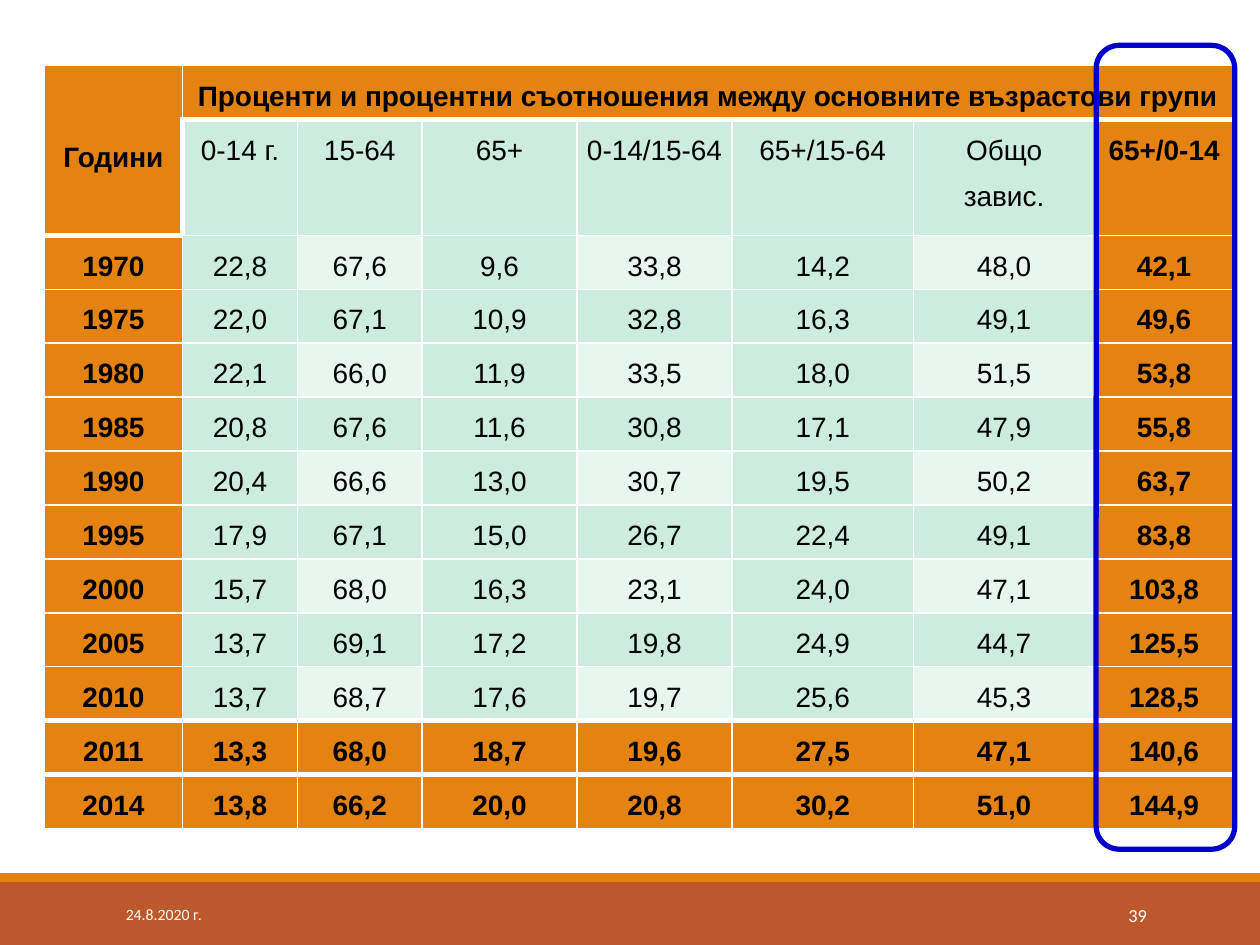
from lxml.etree import SubElement
from pptx import Presentation
from pptx.dml.color import RGBColor
from pptx.enum.shapes import MSO_SHAPE
from pptx.enum.text import MSO_ANCHOR, PP_ALIGN
from pptx.oxml.ns import qn
from pptx.util import Inches, Pt

COLORS = {
    "accent": "E48312",
    "footer": "BD582C",
    "mint": "CBECDE",
    "pale": "E7F6EF",
    "frame": "0000CC",
    "white": "FFFFFF",
    "black": "000000",
}
HEADINGS = ["0-14 г.", "15-64", "65+", "0-14/15-64", "65+/15-64", "Общо завис.", "65+/0-14"]
RATIOS = """1970 22,8 67,6 9,6 33,8 14,2 48,0 42,1
1975 22,0 67,1 10,9 32,8 16,3 49,1 49,6
1980 22,1 66,0 11,9 33,5 18,0 51,5 53,8
1985 20,8 67,6 11,6 30,8 17,1 47,9 55,8
1990 20,4 66,6 13,0 30,7 19,5 50,2 63,7
1995 17,9 67,1 15,0 26,7 22,4 49,1 83,8
2000 15,7 68,0 16,3 23,1 24,0 47,1 103,8
2005 13,7 69,1 17,2 19,8 24,9 44,7 125,5
2010 13,7 68,7 17,6 19,7 25,6 45,3 128,5
2011 13,3 68,0 18,7 19,6 27,5 47,1 140,6
2014 13,8 66,2 20,0 20,8 30,2 51,0 144,9"""

prs = Presentation()
prs.slide_width, prs.slide_height = Inches(10), Inches(7.5)
unit_w, unit_h = prs.slide_width / 100, prs.slide_height / 75
slide = prs.slides.add_slide(prs.slide_layouts[6])


def area(col, row, cols, rows):
    return [round(n * unit) for n, unit in zip((col, row, cols, rows), (unit_w, unit_h) * 2)]


def write(frame, text, align, spacing, color, **font_format):
    paragraph = frame.paragraphs[0]
    paragraph.alignment, paragraph.line_spacing = align, spacing
    run = paragraph.add_run()
    run.text = text
    for key, value in font_format.items():
        setattr(run.font, key, value)
    run.font.color.rgb = RGBColor.from_string(COLORS[color])


for color, place in (("footer", (0, 70, 100, 5)), ("accent", (0, 69.3, 100, 0.7))):
    band = slide.shapes.add_shape(MSO_SHAPE.RECTANGLE, *area(*place))
    band.shadow.inherit = False
    band.fill.solid()
    band.fill.fore_color.rgb = RGBColor.from_string(COLORS[color])
    band.line.fill.background()

entries = [["Години", "Проценти и процентни съотношения между основните възрастови групи"] + [""] * 6]
entries += [[""] + HEADINGS] + [line.split() for line in RATIOS.splitlines()]
last_row, last_col = len(entries) - 1, len(HEADINGS)

table = slide.shapes.add_table(len(entries), last_col + 1, *area(3.5, 5.2, 94.5, 60.6)).table
table.first_row = table.horz_banding = False
for column, width in zip(table.columns, (11, 9.1, 9.9, 12.3, 12.3, 14.4, 14.4, 11)):
    column.width = round(width * unit_w)
for r, row in enumerate(table.rows):
    row.height = round((9.2 if r == 1 else 4.28) * unit_h)
table.cell(0, 0).merge(table.cell(1, 0))
table.cell(0, 1).merge(table.cell(0, last_col))

cell_format = {
    "margin_left": Inches(0.07),
    "margin_right": Inches(0.07),
    "margin_top": 0,
    "margin_bottom": 0,
}
for r, values in enumerate(entries):
    for c, text in enumerate(values):
        cell = table.cell(r, c)
        for key, value in cell_format.items():
            setattr(cell, key, value)
        cell.vertical_anchor = MSO_ANCHOR.MIDDLE if (r, c) == (0, 0) else MSO_ANCHOR.TOP
        thick_edges = {
            "a:lnL": (r, c) == (1, 1),
            "a:lnR": (r, c) == (1, 0),
            "a:lnT": r in (1, last_row - 1, last_row) or (r, c) == (2, 0),
            "a:lnB": r in (0, last_row - 2, last_row - 1) or (r, c) == (1, 0),
        }
        for tag, thick in thick_edges.items():
            edge = SubElement(cell._tc.get_or_add_tcPr(), qn(tag), w=str(Pt(3 if thick else 1)))
            SubElement(SubElement(edge, qn("a:solidFill")), qn("a:srgbClr"), val=COLORS["white"])
        emphasis = r == 0 or r >= last_row - 1 or c in (0, last_col)
        striped = r >= 2 and r % 2 == 0 and c % 2 == 0
        cell.fill.solid()
        cell.fill.fore_color.rgb = RGBColor.from_string(
            COLORS["accent" if emphasis else "pale" if striped else "mint"])
        if text:
            write(cell.text_frame, text, PP_ALIGN.CENTER, 1.5, "black",
                  name="Arial", size=Pt(16), bold=emphasis)

for text, place, align, size in (
    ("24.8.2020 г.", (9, 70.6, 20.3, 4), PP_ALIGN.LEFT, 9),
    ("39", (81.2, 70.6, 10.8, 4), PP_ALIGN.RIGHT, 10.5),
):
    footer = slide.shapes.add_textbox(*area(*place)).text_frame
    footer.word_wrap = True
    footer.vertical_anchor = MSO_ANCHOR.MIDDLE
    write(footer, text, align, 1.0, "white", name="Calibri", size=Pt(size))

highlight = slide.shapes.add_shape(MSO_SHAPE.FLOWCHART_ALTERNATE_PROCESS, *area(87, 3.6, 11, 63.8))
highlight.shadow.inherit = False
highlight.fill.background()
highlight.line.color.rgb = RGBColor.from_string(COLORS["frame"])
highlight.line.width = Pt(3)

prs.save("out.pptx")
